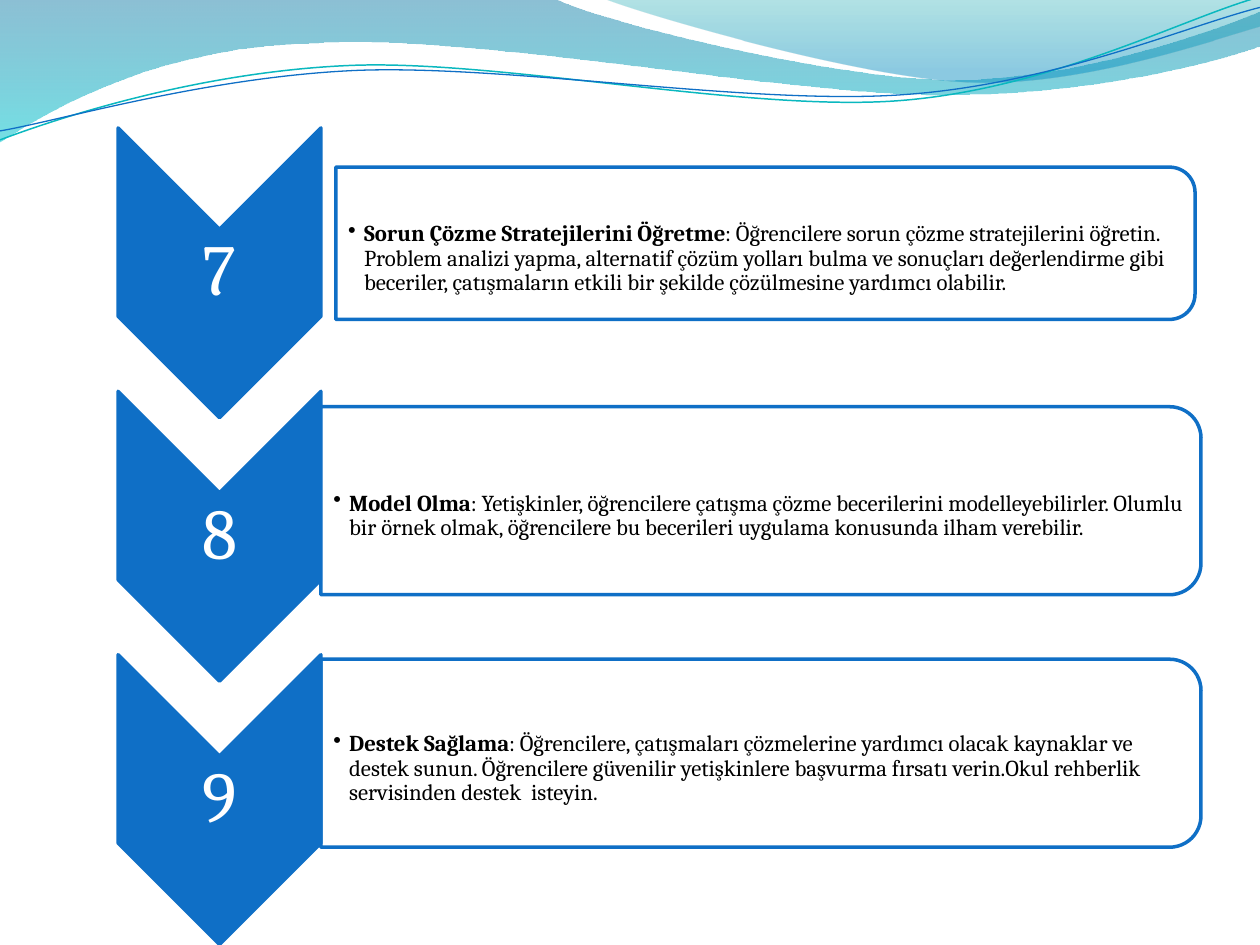
from math import cos, radians, sin

from lxml import etree
from pptx import Presentation
from pptx.dml.color import RGBColor
from pptx.enum.shapes import MSO_SHAPE
from pptx.enum.text import MSO_ANCHOR, PP_ALIGN
from pptx.oxml.ns import qn
from pptx.util import Cm, Pt

CHEVRON = MSO_SHAPE.CHEVRON
TAB = MSO_SHAPE.ROUND_2_SAME_RECTANGLE
MIDDLE = MSO_ANCHOR.MIDDLE
CENTER, LEFT = PP_ALIGN.CENTER, PP_ALIGN.LEFT
BLUE, WHITE, BLACK = "0F6FC6", "FFFFFF", "000000"
FONT = "Cambria"
PITCH = 5.31
TILT = 2.7

WAVES = [
    ([(0, 0), (11.18, -0.03), (12.09, 0.43, 16.87, 1.6, 19.25, 1.6),
      (21.67, 1.6, 24.33, 0.66, 25.4, 0.23), (25.43, 0.91),
      (24.97, 1.12, 22.1, 1.93, 18.95, 1.91),
      (15.8, 1.91, 9.7, 0.71, 6.53, 0.86),
      (3.25, 0.91, 1.17, 2.11, -0.03, 2.87), (0, 0)],
     [(0, "0074A1", 45), (1, "00C6CF", 55)]),
    ([(12.17, -0.03), (12.93, 0.28, 17.32, 1.57, 19.53, 1.65),
      (21.74, 1.75, 24.41, 0.81, 25.4, 0.53), (25.4, 0), (12.17, -0.03)],
     [(0, "00A1A9", 30), (0.8, "008BBF", 45)]),
]
LINES = [
    ([(0, 2.82), (1.22, 2.36, 4.01, 1.45, 7.04, 1.32),
      (10.03, 1.19, 15.06, 2.26, 18.11, 2.03),
      (21.16, 1.8, 23.83, 0.38, 25.35, -0.05)], (12.67, 1.46), "0AB8BF", 0.85),
    ([(0, 2.64), (1.19, 2.44, 4.17, 1.55, 7.19, 1.42),
      (10.24, 1.3, 15.16, 2.13, 18.21, 1.91),
      (21.23, 1.7, 23.9, 0.53, 25.4, 0.15)], (12.69, 1.5), BLUE, 0.75),
]
STEPS = [
    ("7", (6.77, 3.37, 17.32, 3.07), "Sorun Çözme Stratejilerini Öğretme",
     ": Öğrencilere sorun çözme stratejilerini öğretin. Problem analizi yapma, "
     "alternatif çözüm yolları bulma ve sonuçları değerlendirme gibi beceriler, "
     "çatışmaların etkili bir şekilde çözülmesine yardımcı olabilir."),
    ("8", (6.47, 8.2, 17.74, 3.79), "Model Olma",
     ": Yetişkinler, öğrencilere çatışma çözme becerilerini modelleyebilirler. "
     "Olumlu bir örnek olmak, öğrencilere bu becerileri uygulama konusunda "
     "ilham verebilir."),
    ("9", (6.47, 13.29, 17.74, 3.79), "Destek Sağlama",
     ": Öğrencilere, çatışmaları çözmelerine yardımcı olacak kaynaklar ve destek "
     "sunun. Öğrencilere güvenilir yetişkinlere başvurma fırsatı verin.Okul "
     "rehberlik servisinden destek  isteyin."),
]


def color(code):
    return RGBColor.from_string(code)


def fade(shape, *levels):
    for node, level in zip(shape._element.iter(qn("a:srgbClr")), levels):
        etree.SubElement(node, qn("a:alpha"), val=str(level * 1000))


def spin(part, mid, angle):
    c, s = cos(radians(angle)), sin(radians(angle))
    turn = []
    for x, y in zip(part[::2], part[1::2]):
        dx, dy = x - mid[0], y - mid[1]
        turn += [mid[0] + dx * c - dy * s, mid[1] + dx * s + dy * c]
    return turn


def outline(slide, path, close):
    points = [(Cm(x), Cm(y)) for part in path for x, y in zip(part[::2], part[1::2])]
    pen = slide.shapes.build_freeform(*points[0])
    pen.add_line_segments(points[1:], close=close)
    shape = pen.convert_to_shape()
    shape.shadow.inherit = False
    nodes = iter(list(shape._element.iter(qn("a:lnTo"))))
    for part in path[1:]:
        node = next(nodes)
        if len(part) == 6:
            node.tag = qn("a:cubicBezTo")
            for _ in range(2):
                extra = next(nodes)
                node.append(extra[0])
                extra.getparent().remove(extra)
    return shape


def wave(slide, path, stops):
    shape = outline(slide, path, True)
    shape.line.fill.background()
    shape.fill.gradient()
    shape.fill.gradient_angle = 270
    for stop, (place, code, _) in zip(shape.fill.gradient_stops, stops):
        stop.position = place
        stop.color.rgb = color(code)
    fade(shape, *[level for _, _, level in stops])


def curve(slide, path, mid, code, width):
    shape = outline(slide, [spin(part, mid, TILT) for part in path], False)
    shape.rotation = -TILT
    shape.fill.background()
    shape.line.color.rgb = color(code)
    shape.line.width = Pt(width)


def turned(slide, kind, box, fill):
    x, y, w, h = box
    shift = (w - h) / 2
    shape = slide.shapes.add_shape(kind, Cm(x + shift), Cm(y - shift), Cm(h), Cm(w))
    shape.rotation = 90
    shape.shadow.inherit = False
    shape.fill.solid()
    shape.fill.fore_color.rgb = color(fill)
    shape.line.color.rgb = color(BLUE)
    shape.line.width = Pt(2)
    return shape


def text(slide, box, runs, size, code, align=LEFT, inset=(0, 0, 0, 0), bullet=False):
    frame = slide.shapes.add_textbox(*map(Cm, box)).text_frame
    frame.word_wrap = True
    frame.vertical_anchor = MIDDLE
    (frame.margin_left, frame.margin_top,
     frame.margin_right, frame.margin_bottom) = map(Cm, inset)
    para = frame.paragraphs[0]
    para.alignment = align
    para.line_spacing = 0.9
    for words, bold in runs:
        run = para.add_run()
        run.text = words
        run.font.name = FONT
        run.font.size = Pt(size)
        run.font.bold = bold
        run.font.color.rgb = color(code)
    if bullet:
        para.level = 1
        props = para._p.get_or_add_pPr()
        props.set("marL", str(Cm(0.32)))
        props.set("indent", str(Cm(-0.32)))
        etree.SubElement(props, qn("a:buChar"), char="•")


def marker(slide, row, digit):
    top = 2.58 + row * PITCH
    turned(slide, CHEVRON, (2.38, top, 4.09, 5.84), BLUE)
    text(slide, (2.38, top + 2.04, 4.09, 1.75), [(digit, False)], 41, WHITE,
         align=CENTER, inset=(0.08, 0.08, 0.08, 0.08))


def card(slide, box, title, body):
    fade(turned(slide, TAB, box, WHITE), 90)
    x, y, w, h = box
    pad = h * 0.05
    text(slide, (x, y + pad, w - pad, h - 2 * pad), [(title, True), (body, False)],
         13, BLACK, inset=(0.25, 0.65, 0.03, 0.03), bullet=True)


def main():
    deck = Presentation()
    deck.slide_width, deck.slide_height = Cm(25.4), Cm(19.05)
    slide = deck.slides.add_slide(deck.slide_layouts[6])
    for path, stops in WAVES:
        wave(slide, path, stops)
    for path, mid, code, width in LINES:
        curve(slide, path, mid, code, width)
    for row, (step, other) in enumerate(zip(STEPS, reversed(STEPS))):
        marker(slide, row, step[0])
        card(slide, *other[1:])
    deck.save("out.pptx")


if __name__ == "__main__":
    main()
